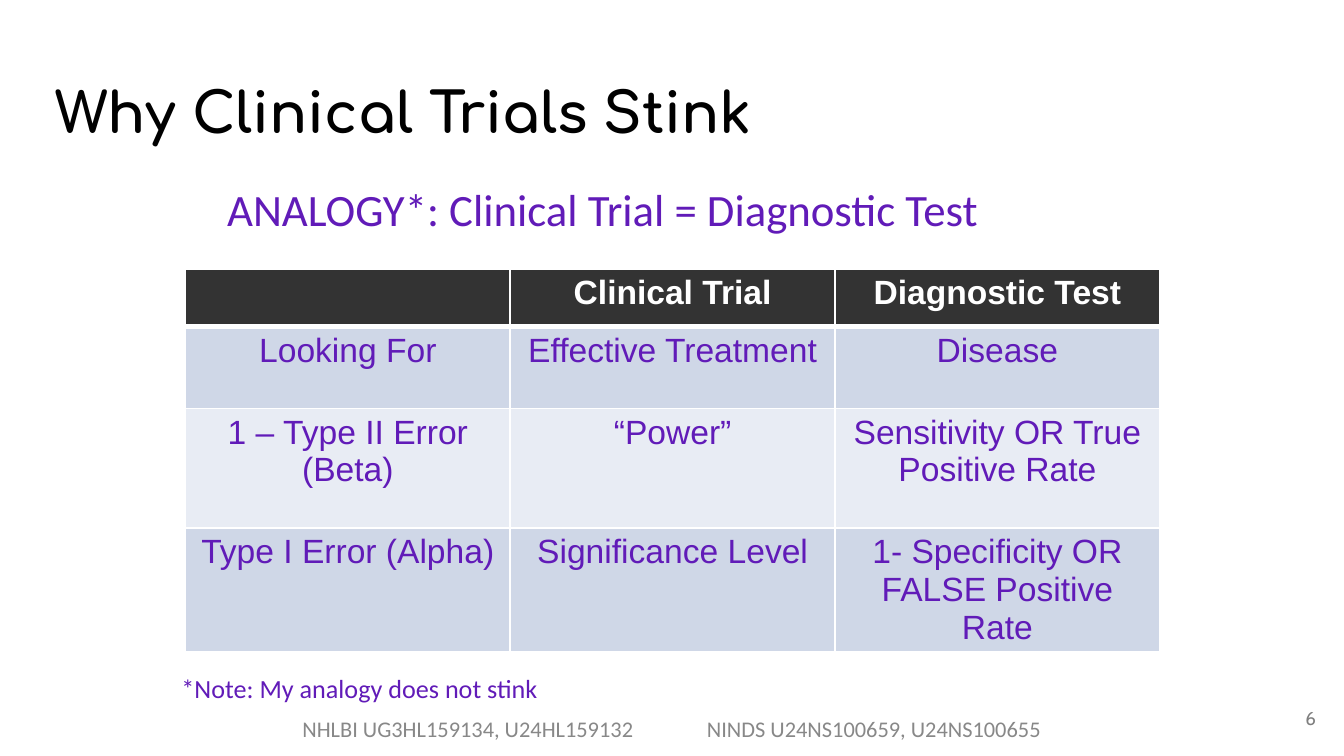
from lxml import etree
from pptx import Presentation
from pptx.dml.color import RGBColor
from pptx.enum.text import MSO_ANCHOR, MSO_AUTO_SIZE, PP_ALIGN
from pptx.oxml.ns import qn
from pptx.util import Inches, Pt

LEFT, CENTER, RIGHT = PP_ALIGN.LEFT, PP_ALIGN.CENTER, PP_ALIGN.RIGHT
TOP, MIDDLE = MSO_ANCHOR.TOP, MSO_ANCHOR.MIDDLE
NO_FIT = MSO_AUTO_SIZE.NONE

COLORS = {
    "black": "000000",
    "white": "FFFFFF",
    "purple": "611BB8",
    "header": "333333",
    "odd": "CFD7E7",
    "even": "E8ECF4",
    "footer": "888888",
    "number": "7F7F7F",
}

ROWS = [
    ["", "Clinical Trial", "Diagnostic Test"],
    ["Looking For", "Effective Treatment", "Disease"],
    ["1 – Type II Error (Beta)", "“Power”", "Sensitivity OR True Positive Rate"],
    ["Type I Error (Alpha)", "Significance Level", "1- Specificity OR FALSE Positive Rate"],
]
ROW_HEIGHTS = [0.43, 0.61, 0.89, 0.89]


def color(name):
    return RGBColor.from_string(COLORS[name])


def write(frame, text, *, font="Calibri", size=18, fill="purple", bold=False,
          align=LEFT, tab=None):
    para = frame.paragraphs[0]
    para.alignment = align
    if tab is not None:
        stops = etree.SubElement(para._p.get_or_add_pPr(), qn("a:tabLst"))
        etree.SubElement(stops, qn("a:tab"), pos=str(Inches(tab)), algn="l")
    span = para.add_run()
    span.text = text
    span.font.name = font
    span.font.size = Pt(size)
    span.font.bold = bold
    span.font.color.rgb = color(fill)


class SlideBuilder:
    def __init__(self, deck):
        self.page = deck.slides.add_slide(deck.slide_layouts[5])

    def frame(self, box, anchor, insets):
        frame = box.text_frame
        frame.word_wrap = True
        frame.auto_size = NO_FIT
        frame.vertical_anchor = anchor
        (frame.margin_left, frame.margin_top,
         frame.margin_right, frame.margin_bottom) = [Inches(inset) for inset in insets]
        return frame

    def title(self, text, left, top, width, height):
        box = self.page.shapes.title
        box.left, box.top = Inches(left), Inches(top)
        box.width, box.height = Inches(width), Inches(height)
        frame = self.frame(box, MIDDLE, (0.07, 0.04, 0.07, 0.04))
        write(frame, text, font="Comfortaa", size=30, fill="black", bold=True)

    def text(self, text, left, top, width, height, anchor=TOP,
             insets=(0.07, 0.04, 0.07, 0.04), **style):
        box = self.page.shapes.add_textbox(
            Inches(left), Inches(top), Inches(width), Inches(height))
        write(self.frame(box, anchor, insets), text, **style)

    def border(self, cell, side, width):
        line = etree.SubElement(cell._tc.get_or_add_tcPr(), qn(f"a:ln{side}"),
                                w=str(Pt(width)))
        fill = etree.SubElement(line, qn("a:solidFill"))
        etree.SubElement(fill, qn("a:srgbClr"), val=COLORS["white"])

    def table(self, rows, heights, left, top, width):
        columns = len(rows[0])
        table = self.page.shapes.add_table(
            len(rows), columns, Inches(left), Inches(top),
            Inches(width), Inches(sum(heights))).table
        for column in table.columns:
            column.width = Inches(width / columns)
        for r, (texts, height) in enumerate(zip(rows, heights)):
            table.rows[r].height = Inches(height)
            header = r == 0
            shade = "header" if header else "odd" if r % 2 else "even"
            for c, text in enumerate(texts):
                cell = table.cell(r, c)
                cell.margin_left = cell.margin_right = Inches(0.08)
                cell.margin_top = cell.margin_bottom = Inches(0.04)
                widths = {"L": 1, "R": 1, "T": 3 if r == 1 else 1, "B": 3 if header else 1}
                for side, weight in widths.items():
                    self.border(cell, side, weight)
                cell.fill.solid()
                cell.fill.fore_color.rgb = color(shade)
                if text:
                    write(cell.text_frame, text, font="Arial", bold=header,
                          fill="white" if header else "purple", align=CENTER)


def main():
    deck = Presentation()
    deck.slide_width = Inches(10)
    deck.slide_height = deck.slide_width * 9 // 16
    slide = SlideBuilder(deck)
    slide.text("NHLBI UG3HL159134, U24HL159132\tNINDS U24NS100659, U24NS100655",
               1.98, 5.22, 6.04, 0.4, anchor=MIDDLE, insets=(0.27, 0.1, 0.1, 0.1),
               size=12, fill="footer", tab=3.01)
    slide.title("Why Clinical Trials Stink", 0.34, 0.49, 9.32, 0.68)
    slide.text("ANALOGY*: Clinical Trial = Diagnostic Test", 1.62, 1.31, 6.75, 3.31, size=24)
    slide.text("*Note: My analogy does not stink", 1.28, 4.96, 4.25, 0.3, size=14)
    slide.table(ROWS, ROW_HEIGHTS, 1.38, 2, 7.25)
    slide.text("6", 9.29, 5.13, 0.6, 0.43, anchor=MIDDLE, insets=(0.1,) * 4,
               font="Cabin", size=10, fill="number", align=RIGHT)
    deck.save("out.pptx")


if __name__ == "__main__":
    main()
